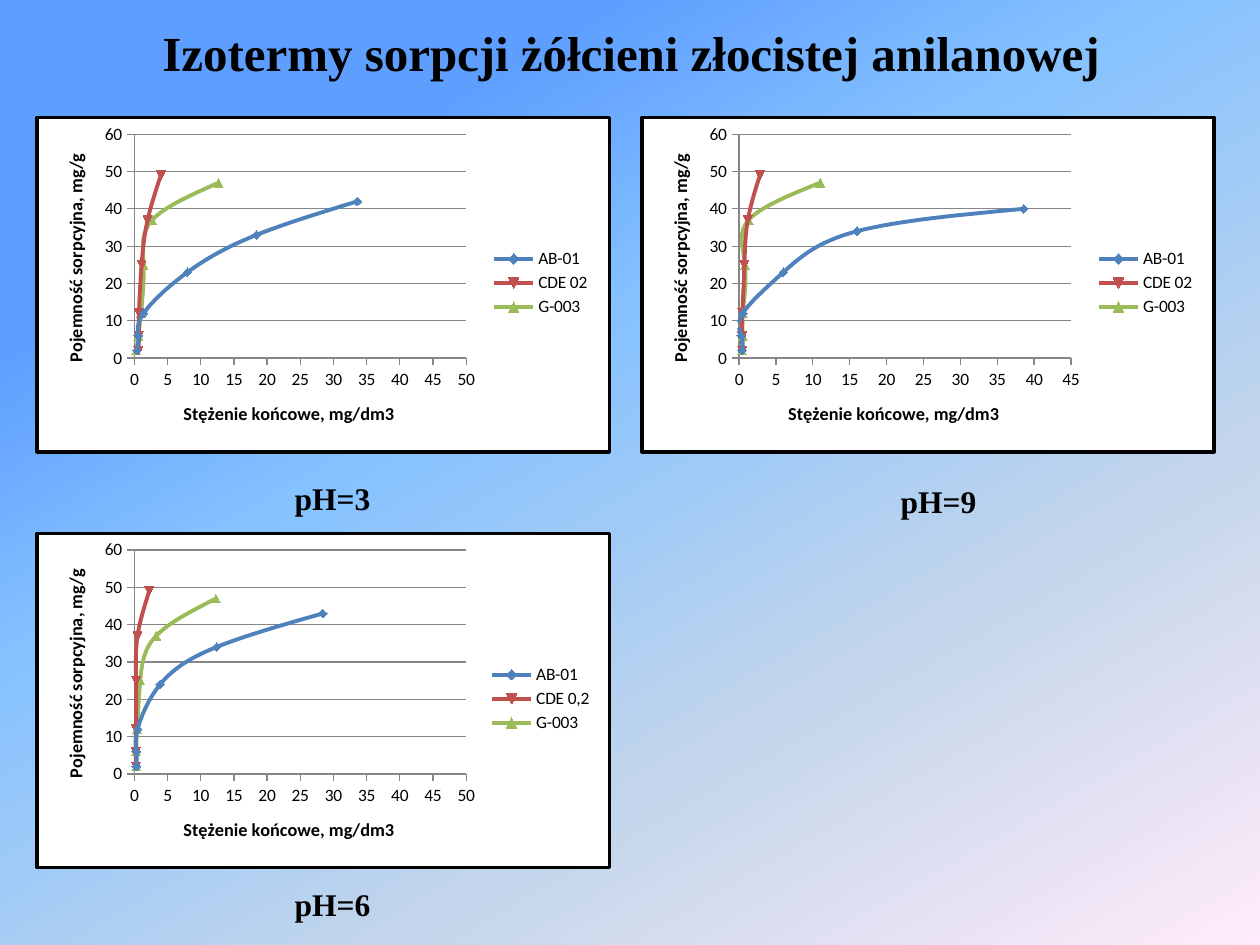
import pptx
import pptx.chart.data
import pptx.dml.color
import pptx.enum.chart
import pptx.enum.text
import pptx.oxml
import pptx.oxml.ns
import pptx.util
from lxml import etree

Pt = pptx.util.Pt
qn = pptx.oxml.ns.qn

SERIF = "Times New Roman"
BACKGROUND = [(21, "5E9EFF"), (40, "85C2FF"), (70, "C4D6EB"), (100, "FFEBFA")]
SERIES_COLORS = ["4F81BD", "C0504D", "9BBB59"]
CHART_W, CHART_H = 329, 193
LEFT, TOP, COL_STEP, ROW_STEP = 20.2, 66.2, 345.6, 237.6

# Each isotherm: column, row, x-axis maximum, {series: (x values, y values)}
ISOTHERMS = [
    (0, 0, 50, {
        "AB-01": ([0.4, 0.6, 1.4, 8, 18.4, 33.6], [2, 6, 12, 23, 33, 42]),
        "CDE 02": ([0.6, 0.7, 0.7, 1.1, 2, 4], [2, 6, 12, 25, 37, 49]),
        "G-003": ([0.3, 0.6, 1, 1.4, 2.7, 12.7], [2, 6, 12, 25, 37, 47]),
    }),
    (0, 1, 50, {
        "AB-01": ([0.3, 0.3, 0.5, 3.9, 12.4, 28.4], [2, 6, 12, 24, 34, 43]),
        "CDE 0,2": ([0.24, 0.24, 0.24, 0.26, 0.48, 2.25], [2, 6, 12, 25, 37, 49]),
        "G-003": ([0.3, 0.3, 0.4, 0.9, 3.3, 12.3], [2, 6, 12, 25, 37, 47]),
    }),
    (1, 0, 45, {
        "AB-01": ([0.4, 0.3, 0.5, 6, 16, 38.6], [2, 6, 12, 23, 34, 40]),
        "CDE 02": ([0.44, 0.39, 0.44, 0.72, 1.18, 2.82], [2, 6, 12, 25, 37, 49]),
        "G-003": ([0.4, 0.5, 0.5, 0.8, 1.3, 11], [2, 6, 12, 25, 37, 47]),
    }),
]
LABELS = [("pH=3", 161.3, 270), ("pH=6", 161.3, 502.2), ("pH=9", 507.6, 271.8)]


def rgb(value):
    return pptx.dml.color.RGBColor.from_string(value)


def set_background(s):
    fill = s.background.fill
    fill.gradient()
    fill.gradient_angle = 300
    stops = next(s._element.iter(qn("a:gsLst")))
    for stop in list(stops):
        stops.remove(stop)
    for position, color in BACKGROUND:
        stop = etree.SubElement(stops, qn("a:gs"), pos=str(position * 1000))
        etree.SubElement(stop, qn("a:srgbClr"), val=color)


def add_text(s, text, left, top, width, height, size, centred=False):
    tf = s.shapes.add_textbox(Pt(left), Pt(top), Pt(width), Pt(height)).text_frame
    tf.word_wrap = centred
    p = tf.paragraphs[0]
    if centred:
        p.alignment = pptx.enum.text.PP_ALIGN.CENTER
    r = p.add_run()
    r.text = text
    r.font.name, r.font.size, r.font.bold = SERIF, Pt(size), True
    r.font.color.rgb = rgb("000000")


def set_layout(element, index, inner=False, **fractions):
    """Place a chart part by fractions of the chart area."""
    for old in element.findall(qn("c:layout")):
        element.remove(old)
    layout = etree.Element(qn("c:layout"))
    manual = etree.SubElement(layout, qn("c:manualLayout"))
    if inner:
        etree.SubElement(manual, qn("c:layoutTarget"), val="inner")
    for mode in ("xMode", "yMode"):
        etree.SubElement(manual, qn("c:" + mode), val="edge")
    for key, value in fractions.items():
        etree.SubElement(manual, qn("c:" + key), val=str(value))
    element.insert(index, layout)


def format_axis(axis, title, maximum, step, x, y):
    axis.minimum_scale, axis.maximum_scale, axis.major_unit = 0, maximum, step
    axis.major_tick_mark = pptx.enum.chart.XL_TICK_MARK.OUTSIDE
    axis.minor_tick_mark = pptx.enum.chart.XL_TICK_MARK.NONE
    axis.tick_labels.number_format = "0"
    axis.tick_labels.number_format_is_linked = False
    axis.format.line.color.rgb = rgb("868686")
    axis.format.line.width = Pt(0.75)
    tf = axis.axis_title.text_frame
    r = tf.paragraphs[0].add_run()
    r.text = title
    r.font.name, r.font.size, r.font.bold = "Calibri", Pt(10.5), True
    r.font.color.rgb = rgb("000000")
    set_layout(axis.axis_title._element, 1, x=x, y=y)
    return tf


def frame_chart(chart):
    """White chart area with a black border."""
    space = chart._chartSpace
    sp_pr = etree.Element(qn("c:spPr"))
    line = etree.Element(qn("a:ln"), w=str(Pt(2)))
    for parent, color in ((sp_pr, "FFFFFF"), (line, "000000")):
        fill = etree.SubElement(parent, qn("a:solidFill"))
        etree.SubElement(fill, qn("a:srgbClr"), val=color)
    sp_pr.append(line)
    space.find(qn("c:txPr")).addprevious(sp_pr)


def add_isotherm(s, column, row, x_max, series):
    data = pptx.chart.data.XyChartData()
    for name, (xs, ys) in series.items():
        points = data.add_series(name)
        for x, y in zip(xs, ys):
            points.add_data_point(x, y)
    chart = s.shapes.add_chart(
        pptx.enum.chart.XL_CHART_TYPE.XY_SCATTER_SMOOTH,
        Pt(LEFT + column * COL_STEP), Pt(TOP + row * ROW_STEP),
        Pt(CHART_W), Pt(CHART_H), data).chart
    chart.has_title = False
    chart.font.name, chart.font.size = "Calibri", Pt(10)
    chart.font.color.rgb = rgb("000000")
    frame_chart(chart)

    # Axes
    format_axis(chart.category_axis, "Stężenie końcowe, mg/dm3", x_max, 5, 0.25, 0.84)
    chart.category_axis.has_major_gridlines = False
    tf = format_axis(chart.value_axis, "Pojemność sorpcyjna, mg/g", 60, 10, 0.04, 0.1)
    body = tf._txBody.find(qn("a:bodyPr"))
    body.set("rot", "-5400000")
    body.set("vert", "horz")
    grid = chart.value_axis.major_gridlines.format.line
    grid.color.rgb, grid.width = rgb("868686"), Pt(0.75)

    # Legend and plot area
    chart.has_legend = True
    chart.legend.position = pptx.enum.chart.XL_LEGEND_POSITION.RIGHT
    chart.legend.include_in_layout = False
    set_layout(chart.legend._element, 1, x=0.78, y=0.38, w=0.2, h=0.23)
    plot_area = chart._chartSpace.chart.plotArea
    set_layout(plot_area, 0, inner=True, x=0.17, y=0.05, w=0.58, h=0.67)

    # Curves
    for curve, color in zip(chart.plots[0].series, SERIES_COLORS):
        curve._element.get_or_add_smooth().val = True
        curve.format.line.color.rgb = rgb(color)
        curve.format.line.width = Pt(2.25)
        curve.marker.style = pptx.enum.chart.XL_MARKER_STYLE.AUTOMATIC
        curve.marker.size = 5
        curve.marker.format.fill.solid()
        curve.marker.format.fill.fore_color.rgb = rgb(color)


def main():
    prs = pptx.Presentation()
    prs.slide_width, prs.slide_height = Pt(720), Pt(540)
    s = prs.slides.add_slide(prs.slide_layouts[6])
    set_background(s)
    add_text(s, "Izotermy sorpcji żółcieni złocistej anilanowej",
             36.7, 9.4, 648, 51, 28, centred=True)
    for isotherm in ISOTHERMS:
        add_isotherm(s, *isotherm)
    for text, left, top in LABELS:
        add_text(s, text, left, top, 58.3, 28.8, 18)
    prs.save("out.pptx")


if __name__ == "__main__":
    main()
